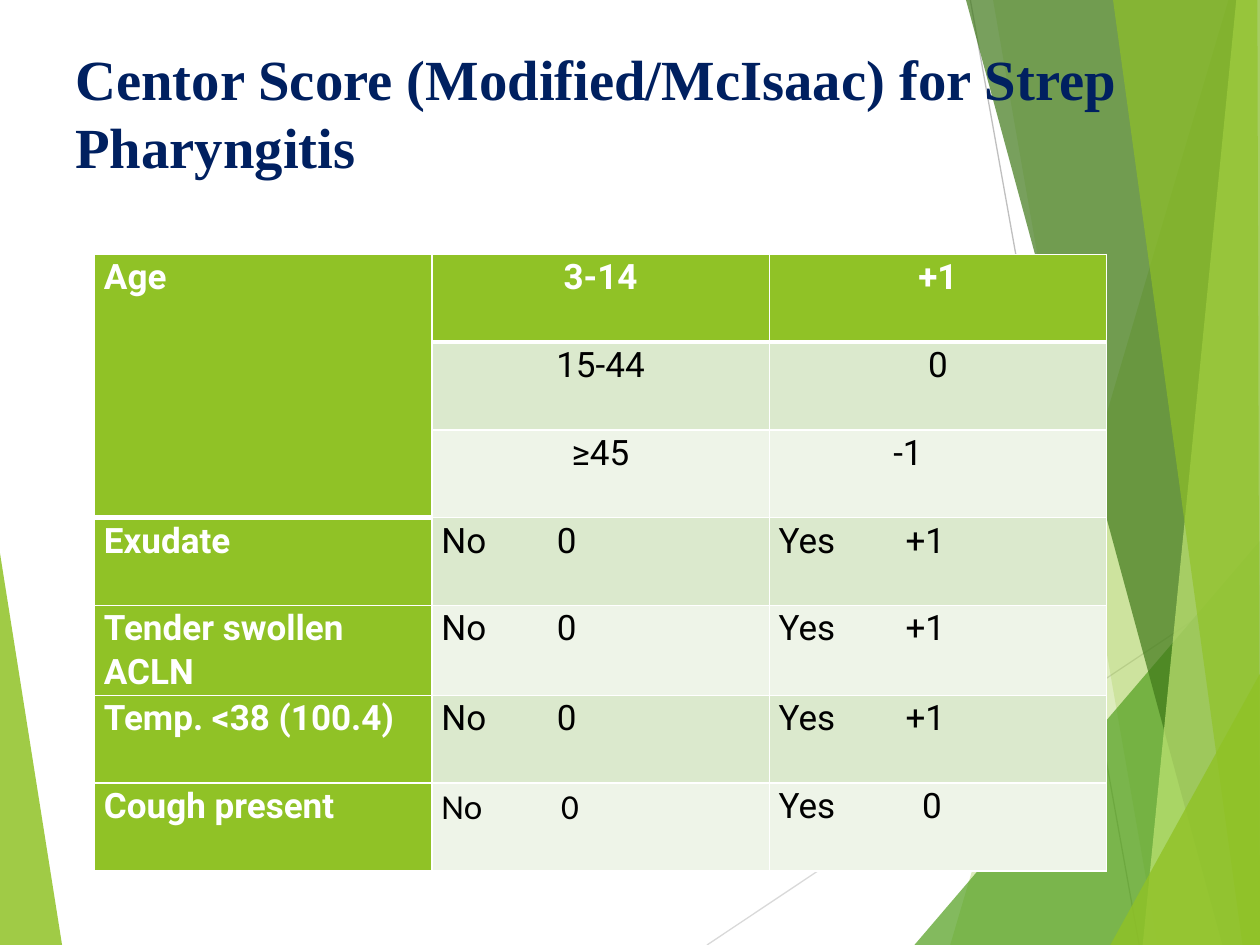
import pptx
import pptx.dml.color
import pptx.enum.shapes
import pptx.enum.text
import pptx.oxml.ns
import pptx.util
from dataclasses import dataclass
from lxml import etree

Pt = pptx.util.Pt
RGB = pptx.dml.color.RGBColor.from_string
ALIGN = pptx.enum.text.PP_ALIGN
qn = pptx.oxml.ns.qn


@dataclass(frozen=True)
class Theme:
    """Colours, fonts and sizes of the slide."""
    green: str = "90C226"
    leaf: str = "54A021"
    forest: str = "3F7819"
    lime: str = "C0E474"
    navy: str = "002060"
    white: str = "FFFFFF"
    black: str = "000000"
    bands: tuple = ("DBE9CD", "EEF4E8")
    lines: tuple = ("D9D9D9", "BFBFBF")
    title_font: str = "Times New Roman"
    body_font: str = "Roboto"
    alt_font: str = "Calibri"
    title_size: float = 32.4
    body_size: float = 20


THEME = Theme()
WIDTH, HEIGHT = 720, 540

LEFT_FACET = (THEME.green, 85, [(0, 316), (35.5, 540), (0, 540)])
RIGHT_FACETS = [
    (THEME.green, 30, [(702, 0), (543, 540), (720, 540), (720, 0)]),
    (THEME.green, 20, [(567.5, 0), (661.5, 540), (720, 540), (720, 0)]),
    (THEME.leaf, 72, [(522.5, 540), (720, 309), (720, 540)]),
    (THEME.forest, 70, [(552, 0), (698.5, 540), (720, 540), (720, 0)]),
    (THEME.lime, 70, [(706.5, 0), (653, 540), (720, 540), (720, 0)]),
    (THEME.green, 65, [(636, 0), (710, 540), (720, 540), (718.5, 0)]),
    (THEME.green, 80, [(634.5, 540), (720, 385), (720, 540)]),
]
RAYS = [(404, 540, 720, 329), (554.5, 0, 651, 540)]

ROWS = [
    ("Age", "3-14", "+1"),
    ("", "15-44", "0"),
    ("", "≥45", "-1"),
    ("Exudate", "No\t0", "Yes\t+1"),
    ("Tender swollen ACLN", "No\t0", "Yes\t+1"),
    ("Temp. <38 (100.4)", "No\t0", "Yes\t+1"),
    ("Cough present", "No\t0", "Yes\t0"),
]
AGE_ROWS = 3
TABS = (66, 72.5)
LAST_TABS = (68.5, 82)
MINUS_INDENT = 65.5


def set_attrs(obj, values):
    """Set each named attribute of an object."""
    for name, value in values.items():
        setattr(obj, name, value)


def style_run(r, font, size, color, bold):
    """Give a run its font, size, weight and colour."""
    set_attrs(r.font, {"name": font, "size": Pt(size), "bold": bold})
    r.font.color.rgb = RGB(color)


def add_facet(s, color, alpha, points):
    """Draw one translucent polygon."""
    emu = [(Pt(x), Pt(y)) for x, y in points]
    builder = s.shapes.build_freeform(*emu[0], scale=1.0)
    builder.add_line_segments(emu[1:], close=True)
    sp = builder.convert_to_shape()
    sp.shadow.inherit = False
    sp.fill.solid()
    sp.fill.fore_color.rgb = RGB(color)
    sp.line.fill.background()
    clr = next(sp._element.spPr.iter(qn("a:srgbClr")))
    etree.SubElement(clr, qn("a:alpha"), val=str(alpha * 1000))


def add_ray(s, color, x1, y1, x2, y2):
    """Draw one thin background line."""
    sp = s.shapes.add_connector(
        pptx.enum.shapes.MSO_CONNECTOR.STRAIGHT, Pt(x1), Pt(y1), Pt(x2), Pt(y2))
    sp.line.color.rgb = RGB(color)
    sp.line.width = Pt(0.75)
    etree.SubElement(sp._element.spPr, qn("a:effectLst"))


def add_backdrop(s, x, y, w, h):
    """Draw the faceted backdrop, designed on a 720 by 540 grid, in a box."""
    def fit(px, py):
        return x + px * w / WIDTH, y + py * h / HEIGHT

    def facet(color, alpha, points):
        add_facet(s, color, alpha, [fit(*point) for point in points])

    facet(*LEFT_FACET)
    for color, (x1, y1, x2, y2) in zip(THEME.lines, RAYS):
        add_ray(s, color, *fit(x1, y1), *fit(x2, y2))
    for spec_row in RIGHT_FACETS:
        facet(*spec_row)


def add_title(s, x, y, w, h):
    """Place the slide title at the top of its box."""
    tf = s.shapes.add_textbox(Pt(x), Pt(y), Pt(w), Pt(h)).text_frame
    set_attrs(tf, {"word_wrap": True,
                   "vertical_anchor": pptx.enum.text.MSO_ANCHOR.TOP})
    r = tf.paragraphs[0].add_run()
    r.text = "Centor Score (Modified/McIsaac) for Strep Pharyngitis"
    style_run(r, THEME.title_font, THEME.title_size, THEME.navy, True)


def set_borders(cell, bottom):
    """Outline a cell in white with the given bottom width."""
    tc_pr = cell._tc.get_or_add_tcPr()
    for side, width in {"L": 1, "R": 1, "T": 1, "B": bottom}.items():
        ln = etree.SubElement(tc_pr, qn(f"a:ln{side}"), w=str(Pt(width)))
        fill = etree.SubElement(ln, qn("a:solidFill"))
        etree.SubElement(fill, qn("a:srgbClr"), val=THEME.white)


def fill_cell(cell, row, col):
    """Format one score cell and write its text."""
    text = ROWS[row][col]
    head = row == 0 or col == 0
    age_end = row == 0 or (col == 0 and row < AGE_ROWS)
    set_borders(cell, 3 if age_end else 1)
    set_attrs(cell, {"margin_left": Pt(5.4), "margin_right": Pt(5.4),
                     "margin_top": 0, "margin_bottom": 0})
    cell.fill.solid()
    cell.fill.fore_color.rgb = RGB(THEME.green if head else THEME.bands[(row - 1) % 2])
    if not text:
        return
    p = cell.text_frame.paragraphs[0]
    centred = col > 0 and row < AGE_ROWS and text != "-1"
    set_attrs(p, {"alignment": ALIGN.CENTER if centred else ALIGN.LEFT,
                  "line_spacing": 1.07, "space_after": Pt(8)})
    p_pr = p._p.get_or_add_pPr()
    last = row == len(ROWS) - 1
    if text == "-1":
        p_pr.set("marL", str(Pt(MINUS_INDENT)))
    if "\t" in text:
        stops = etree.SubElement(p_pr, qn("a:tabLst"))
        pos = (LAST_TABS if last else TABS)[col - 1]
        etree.SubElement(stops, qn("a:tab"), pos=str(Pt(pos)), algn="l")
    r = p.add_run()
    r.text = text
    font = THEME.alt_font if last and col == 1 else THEME.body_font
    style_run(r, font, THEME.body_size, THEME.white if head else THEME.black, head)


def add_score_table(s, x, y, w, h):
    """Place the score table in its box."""
    n_cols = len(ROWS[0])
    table = s.shapes.add_table(
        len(ROWS), n_cols, Pt(x), Pt(y), Pt(w), Pt(h)).table
    set_attrs(table, {"first_row": False, "horz_banding": False})
    for column in table.columns:
        column.width = Pt(w / n_cols)
    for line in table.rows:
        line.height = Pt(h / len(ROWS))
    for row in range(len(ROWS)):
        for col in range(n_cols):
            fill_cell(table.cell(row, col), row, col)
    table.cell(0, 0).merge(table.cell(AGE_ROWS - 1, 0))


def main():
    """Build the slide and save it."""
    prs = pptx.Presentation()
    set_attrs(prs, {"slide_width": Pt(WIDTH), "slide_height": Pt(HEIGHT)})
    s = prs.slides.add_slide(prs.slide_layouts[6])
    add_backdrop(s, 0, 0, WIDTH, HEIGHT)
    add_title(s, 36, 21.6, 648, 118)
    add_score_table(s, 54, 145.3, 578.4, 351.4)
    prs.save("out.pptx")


if __name__ == "__main__":
    main()
